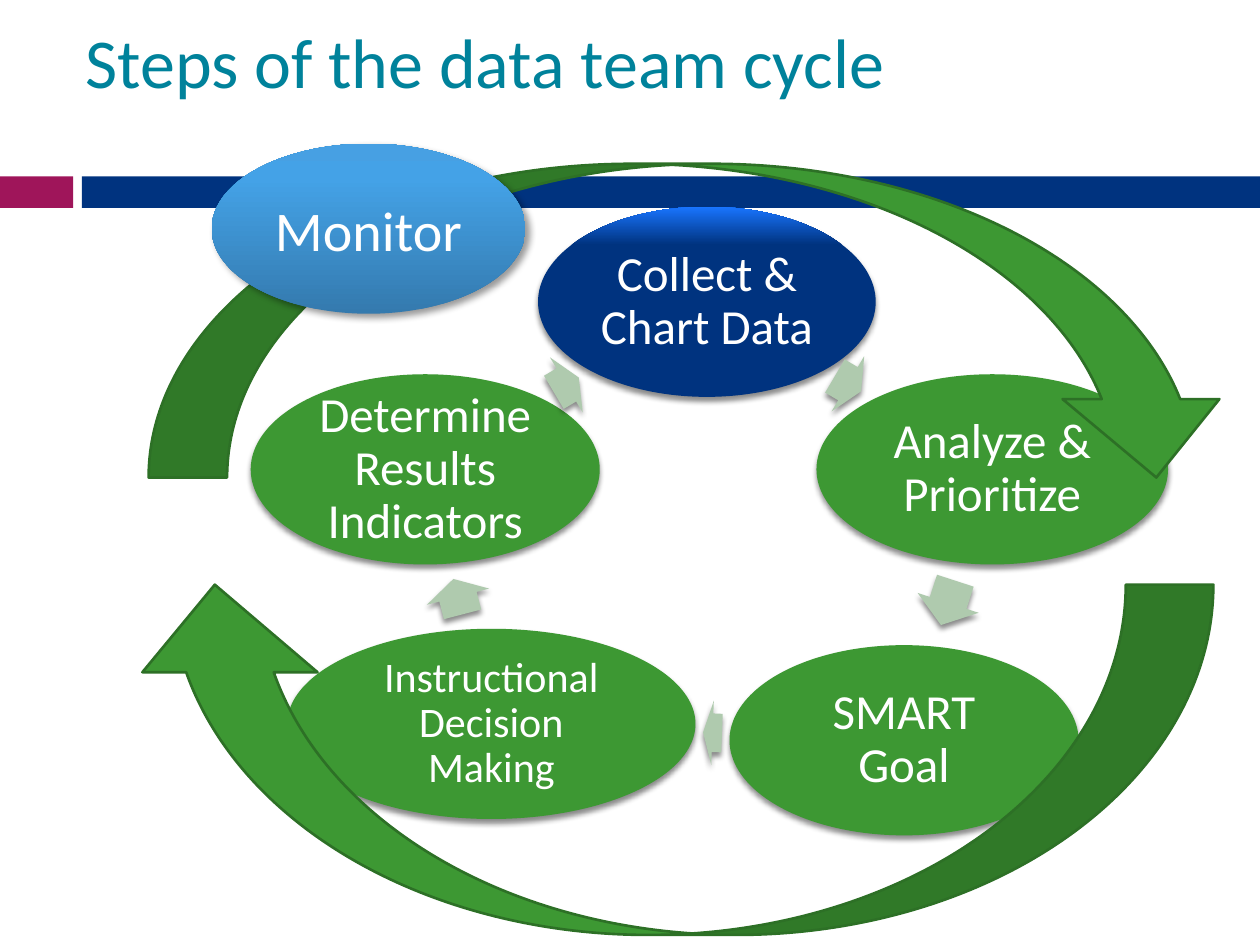
import copy

import pptx
import pptx.dml.color
import pptx.enum.shapes
import pptx.enum.text
import pptx.oxml.ns
import pptx.util
from lxml import etree

SHAPES = pptx.enum.shapes.MSO_SHAPE
ALIGN = pptx.enum.text.PP_ALIGN
ANCHOR = pptx.enum.text.MSO_ANCHOR
qn = pptx.oxml.ns.qn

COLUMNS, ROWS = 100, 75
WHITE, NAVY, GREEN, PALE = "FFFFFF", "00337F", "3D9833", "AFCAAE"
SOFT_SHADOW = (45, 3, 2.4, 90)
MONITOR_SHADOW = (40, 4, 3, 45)


def color(value):
    return pptx.dml.color.RGBColor.from_string(value)


class CycleSlide:
    font = "Calibri"

    def __init__(self, presentation):
        self.column = presentation.slide_width / COLUMNS
        self.row = presentation.slide_height / ROWS
        self.slide = presentation.slides.add_slide(presentation.slide_layouts[6])

    def box(self, left, top, width, height):
        return [round(length) for length in (left * self.column, top * self.row,
                                             width * self.column, height * self.row)]

    def shape(self, kind, place, fill, shadow=None):
        shape = self.slide.shapes.add_shape(kind, *self.box(*place))
        shape.shadow.inherit = False
        shape.line.fill.background()
        if isinstance(fill, str):
            shape.fill.solid()
            shape.fill.fore_color.rgb = color(fill)
        else:
            self.gradient(shape, fill)
        if shadow:
            self.cast_shadow(shape, *shadow)
        return shape

    def gradient(self, shape, stops):
        shape.fill.gradient()
        shape.fill.gradient_angle = 90
        stop_list = shape._element.spPr.find(".//" + qn("a:gsLst"))
        stop_list.append(copy.deepcopy(stop_list[0]))
        for stop, (position, value) in zip(shape.fill.gradient_stops, stops):
            stop.position = position
            stop.color.rgb = color(value)

    def cast_shadow(self, shape, opacity, blur, distance, angle):
        effects = shape._element.spPr.find(qn("a:effectLst"))
        outer = etree.SubElement(
            effects, qn("a:outerShdw"), blurRad=str(pptx.util.Pt(blur)),
            dist=str(pptx.util.Pt(distance)), dir=str(angle * 60000), rotWithShape="0")
        black = etree.SubElement(outer, qn("a:srgbClr"), val="000000")
        etree.SubElement(black, qn("a:alpha"), val=str(opacity * 1000))

    def label(self, shape, text, size, value, inset, alignment, anchor):
        frame = shape.text_frame
        frame.text = text
        frame.word_wrap = True
        frame.vertical_anchor = anchor
        frame.margin_left = frame.margin_right = pptx.util.Inches(inset)
        frame.margin_top = frame.margin_bottom = pptx.util.Inches(0)
        paragraph = frame.paragraphs[0]
        paragraph.alignment = alignment
        font = paragraph.runs[0].font
        font.name = self.font
        font.size = pptx.util.Pt(size)
        font.color.rgb = color(value)
        return paragraph

    def title(self, text, place):
        shape = self.slide.shapes.add_textbox(*self.box(*place))
        self.label(shape, text, 40, "00829B", 0.1, ALIGN.LEFT, ANCHOR.TOP)

    def ellipse(self, text, place, fill, size, shadow=SOFT_SHADOW, spacing=0.9):
        shape = self.shape(SHAPES.OVAL, place, fill, shadow)
        paragraph = self.label(shape, text, size, WHITE, 0.05, ALIGN.CENTER, ANCHOR.MIDDLE)
        paragraph.line_spacing = spacing

    def step_arrow(self, place, rotation):
        shape = self.shape(SHAPES.RIGHT_ARROW, place, PALE, SOFT_SHADOW)
        shape.adjustments[0] = 0.6
        shape.adjustments[1] = 0.5
        shape.rotation = rotation

    def sweep_arrow(self, place, flip):
        shape = self.shape(SHAPES.CURVED_UP_ARROW, place, GREEN)
        shape.line.color.rgb = color("2D7026")
        shape.line.width = pptx.util.Pt(1.5)
        shape._element.spPr.find(qn("a:xfrm")).set(flip, "1")


def main():
    presentation = pptx.Presentation()
    presentation.slide_width = pptx.util.Inches(10)
    presentation.slide_height = pptx.util.Inches(7.5)
    cycle = CycleSlide(presentation)

    cycle.shape(SHAPES.RECTANGLE, (0, 14, 5.8, 2.5), "9F155A")
    cycle.shape(SHAPES.RECTANGLE, (6.5, 14, 93.5, 2.5), NAVY)
    cycle.title("Steps of the data team cycle", (5.8, 1.5, 90, 12.5))

    step_height, arrow_height = 15.1, 5.1
    collect_fill = ((0, NAVY), (0.8, NAVY), (1, "1975FF"))
    steps = (
        ("Collect & Chart Data", 42.7, 16.4, 26.8, collect_fill, 28, (66.1, 27.9, 2.4), 30.5),
        ("Analyze & Prioritize", 64.8, 29.7, 27.9, GREEN, 28, (73.4, 45.3, 3.7), 108),
        ("SMART Goal", 57.9, 51.2, 27.7, GREEN, 28, (55.8, 55.6, 1.5), 182.3),
        ("Instructional Decision Making", 22.8, 49.9, 32.4, GREEN, 24, (34.9, 44.8, 2.9), 255.4),
        ("Determine Results Indicators", 19.9, 29.7, 27.7, GREEN, 28, (43.8, 28, 2.3), 329.3),
    )
    for text, left, top, width, fill, size, arrow, rotation in steps:
        cycle.ellipse(text, (left, top, width, step_height), fill, size)
        cycle.step_arrow((*arrow, arrow_height), rotation)

    cycle.sweep_arrow((11.8, 13, 86.2, 24.9), "flipV")
    cycle.sweep_arrow((10.1, 46.4, 86.2, 27.8), "flipH")
    monitor_fill = ((0, "347AAE"), (0.8, "44A2E7"), (1, "47A0E3"))
    cycle.ellipse("Monitor", (16.8, 11.4, 24.9, 13.5), monitor_fill, 32, MONITOR_SHADOW, 1.0)

    presentation.save("out.pptx")


if __name__ == "__main__":
    main()
